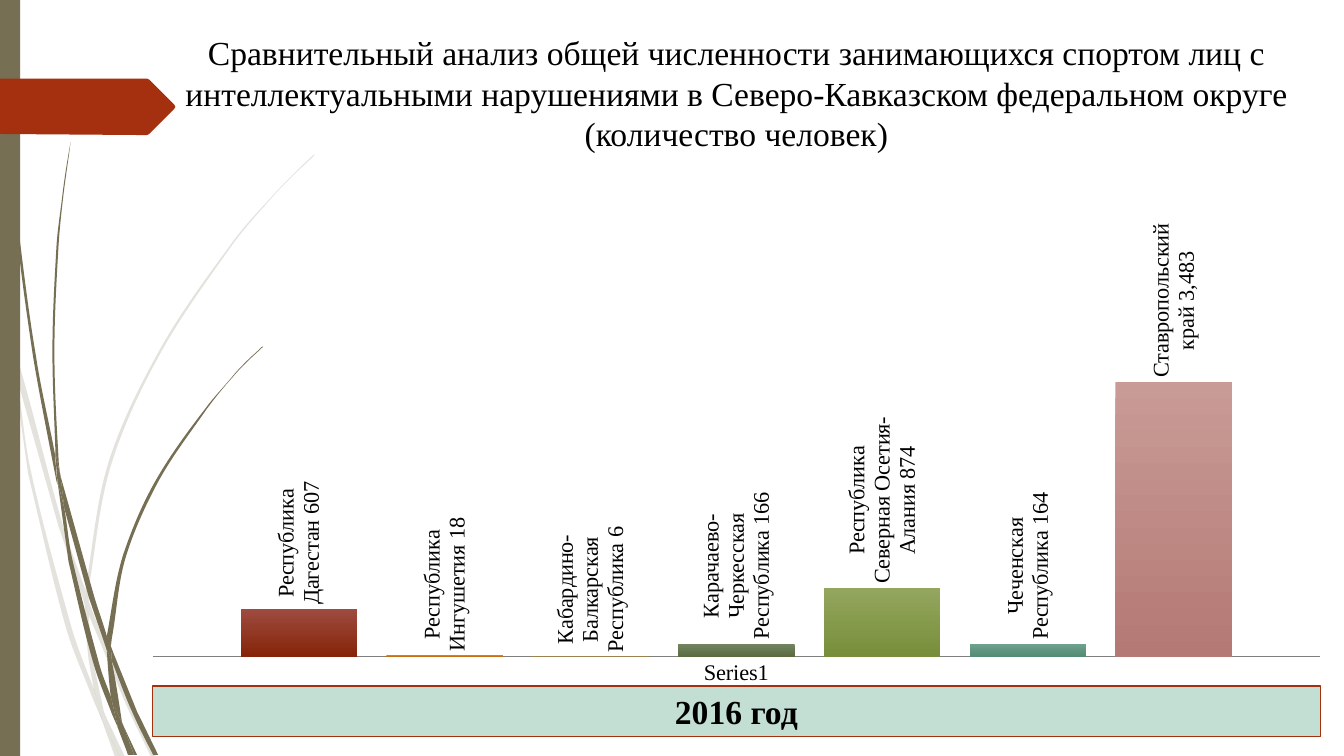
import math

import pptx
import pptx.chart.data
import pptx.dml.color
import pptx.enum.chart
import pptx.enum.shapes
import pptx.enum.text
import pptx.oxml
import pptx.oxml.ns
import pptx.util

Pt = pptx.util.Pt
qn = pptx.oxml.ns.qn
FONT = "Times New Roman"
GRID = Pt(0.72)  # drawing unit of the outlines
COLORS = {
    "black": "000000",
    "olive": "766F54",
    "red": "A53010",
    "mint": "C3DED3",
    "axis": "808080",
}

# Region, people, top and bottom colour of the column
REGIONS = [
    ("Республика Дагестан", 607, "9E4B40", "852408"),
    ("Республика Ингушетия", 18, "DE7E18", "C06A10"),
    ("Кабардино-Балкарская Республика", 6, "9F8351", "8A7040"),
    ("Карачаево-Черкесская Республика", 166, "728462", "5A6B40"),
    ("Республика Северная Осетия-Алания", 874, "94A65E", "788E3A"),
    ("Чеченская Республика", 164, "6CA28E", "548B74"),
    ("Ставропольский край", 3483, "C99B96", "B47974"),
]

# Pieces of the grass blades: one edge down, the other edge back, in grid units
PALE_GRASS = [
    ([(11, 350), (9, 322), (0, 282)], [(0, 299), (10, 344)]),
    ([(58, 522), (84, 599)], [(85, 586), (62, 520), (14, 345), (17, 376)]),
    ([(92, 607), (88, 596)], [(88, 610), (123, 694), (150, 751)], [(155, 751), (127, 692)]),
    ([(119, 751), (124, 751)], [(105, 711)]),
    ([(93, 683), (70, 619), (31, 469), (17, 376), (11, 350)],
     [(28, 470), (65, 621), (92, 693), (101, 714), (99, 707)]),
    ([(84, 599), (87, 646), (93, 683), (96, 692), (105, 711)],
     [(103, 706), (91, 646), (88, 610), (88, 608)]),
    ([(88, 584), (110, 462), (160, 349), (229, 245), (268, 198), (290, 175), (312, 154)],
     [(312, 153), (289, 175), (268, 197), (228, 244), (158, 348), (107, 461),
      (85, 584), (85, 586), (88, 596)]),
    ([(101, 714), (114, 751)], [(119, 751)]),
    ([(88, 608), (88, 610), (88, 596)], [(85, 586), (84, 599)]),
    ([(96, 692), (93, 683)], [(99, 707), (101, 714), (119, 751)], [(105, 711)]),
]
DARK_GRASS = [
    ([(7, 110), (17, 233), (33, 355), (56, 477), (57, 481)],
     [(55, 457), (55, 453), (36, 355), (19, 232), (8, 109), (5, 48), (4, 0)],
     [(3, 0), (4, 48)]),
    ([(88, 592), (106, 645)], [(106, 633), (106, 631), (93, 590), (60, 472)], [(64, 505)]),
    ([(113, 649), (110, 641)], [(111, 656), (132, 708), (152, 749)], [(157, 749), (136, 706)]),
    ([(110, 691), (98, 657), (72, 556), (64, 505), (57, 477)],
     [(68, 557), (93, 659), (111, 708), (117, 722)], [(116, 717)]),
    ([(60, 472), (58, 453), (54, 349), (58, 245), (63, 193), (70, 141)],
     [(70, 141), (62, 193), (56, 245), (52, 349), (55, 449)]),
    ([(133, 749), (136, 749)], [(122, 719)]),
    ([(57, 477), (64, 505)], [(60, 472), (55, 449)], [(55, 453)]),
    ([(111, 633), (125, 552), (158, 476), (205, 406), (231, 374), (245, 359), (261, 344)],
     [(260, 344), (245, 358), (231, 373), (204, 405), (156, 474), (122, 551),
      (106, 631)], [(110, 641)]),
    ([(117, 722), (127, 749)], [(131, 749)]),
    ([(106, 645), (110, 691), (116, 706), (122, 719)], [(121, 716), (111, 656), (109, 651)]),
    ([(106, 645), (109, 651), (111, 656)], [(110, 641), (106, 631), (106, 633)]),
    ([(116, 706), (110, 691)], [(116, 717), (117, 722), (130, 749)], [(133, 749), (122, 719)]),
]
ARROW = [[point] for point in (
    (173, 108), (148, 133), (146, 134), (136, 134), (0, 133), (0, 78), (136, 78),
    (146, 78), (148, 79), (173, 104), (174, 106))]


def rgb(value):
    return pptx.dml.color.RGBColor.from_string(value)


def paint(shape, color, alpha=None):
    shape.shadow.inherit = False
    shape.fill.solid()
    shape.fill.fore_color.rgb = rgb(COLORS[color])
    shape.line.fill.background()
    if alpha is not None:
        tint = shape.fill._xPr.find(".//" + qn("a:srgbClr"))
        tint.append(pptx.oxml.parse_xml(
            f'<a:alpha {pptx.oxml.ns.nsdecls("a")} val="{alpha * 1000}"/>'))


def handle(point, before, after, reach):
    """Control point that leaves point along the direction from before to after."""
    span = math.dist(before, after) or 1
    return tuple(p + (b - a) / span * reach for p, a, b in zip(point, before, after))


def curve_edges(shape, edges):
    """Turn the straight segments inside each edge into Bezier curves."""
    nodes = list(shape._element.iter(qn("a:moveTo"), qn("a:lnTo")))
    for edge in edges:
        group, nodes = nodes[:len(edge)], nodes[len(edge):]
        spots = [(int(node[0].get("x")), int(node[0].get("y"))) for node in group]
        padded = [spots[0]] + spots + [spots[-1]]
        for node, before, start, end, after in zip(
                group[1:], padded, padded[1:], padded[2:], padded[3:]):
            reach = math.dist(start, end) / 3
            controls = (handle(start, before, end, reach), handle(end, after, start, reach), end)
            points = "".join(f'<a:pt x="{round(x)}" y="{round(y)}"/>' for x, y in controls)
            node.getparent().replace(node, pptx.oxml.parse_xml(
                f'<a:cubicBezTo {pptx.oxml.ns.nsdecls("a")}>{points}</a:cubicBezTo>'))


def add_outline(page, left, top, edges, color, alpha=None):
    points = [point for edge in edges for point in edge]
    builder = page.shapes.build_freeform(*points[0], scale=GRID)
    builder.add_line_segments(points[1:], close=True)
    shape = builder.convert_to_shape(left, top)
    curve_edges(shape, edges)
    paint(shape, color, alpha)


def add_decoration(page, left, top, width, height):
    """Grass blades, side band and arrow along the left edge."""
    for grass, alpha in ((PALE_GRASS, 20), (DARK_GRASS, None)):
        for edges in grass:
            add_outline(page, left, top, edges, "olive", alpha)
    band = page.shapes.add_shape(
        pptx.enum.shapes.MSO_SHAPE.RECTANGLE, left, top, width, height)
    paint(band, "olive")
    add_outline(page, left, top, ARROW, "red")


def write(frame, text, bold=False):
    frame.word_wrap = True
    frame.text = text
    para = frame.paragraphs[0]
    para.alignment = pptx.enum.text.PP_ALIGN.CENTER
    font = para.runs[0].font
    font.name, font.size, font.bold = FONT, Pt(24), bold
    font.color.rgb = rgb(COLORS["black"])


def add_title(page, left, top, width, height):
    box = page.shapes.add_textbox(left, top, width, height)
    write(box.text_frame,
          "Сравнительный анализ общей численности занимающихся спортом лиц с "
          "интеллектуальными нарушениями в Северо-Кавказском федеральном округе "
          "(количество человек)")


def set_font(font):
    font.name, font.size = FONT, Pt(16)
    font.color.rgb = rgb(COLORS["black"])


def label_series(series):
    """Upright label with name and value above the column."""
    labels = series.data_labels
    labels.show_value = labels.show_series_name = True
    labels.number_format, labels.number_format_is_linked = "#,##0", False
    labels.position = pptx.enum.chart.XL_LABEL_POSITION.OUTSIDE_END
    set_font(labels.font)
    body = labels._element.find(".//" + qn("a:bodyPr"))
    for name, value in (("rot", "-5400000"), ("vert", "horz"), ("wrap", "square")):
        body.set(name, value)
    labels._element.find(qn("c:showBubbleSize")).addnext(pptx.oxml.parse_xml(
        f'<c:separator {pptx.oxml.ns.nsdecls("c")}> </c:separator>'))


def set_plot_area(chart, x, y, w, h):
    area = chart._chartSpace.chart.plotArea
    for old in area.findall(qn("c:layout")):
        area.remove(old)
    parts = [("layoutTarget", "inner"), ("xMode", "edge"), ("yMode", "edge"),
             ("x", x), ("y", y), ("w", w), ("h", h)]
    inner = "".join(f'<c:{name} val="{value}"/>' for name, value in parts)
    area.insert(0, pptx.oxml.parse_xml(
        f'<c:layout {pptx.oxml.ns.nsdecls("c")}>'
        f'<c:manualLayout>{inner}</c:manualLayout></c:layout>'))


def add_region_chart(page, left, top, width, height):
    data = pptx.chart.data.CategoryChartData(number_format="#,##0")
    data.categories = ["Series1"]
    for name, people, _, _ in REGIONS:
        data.add_series(name, [people])
    chart = page.shapes.add_chart(
        pptx.enum.chart.XL_CHART_TYPE.COLUMN_CLUSTERED, left, top, width, height, data).chart
    chart.has_legend = chart.has_title = False
    set_font(chart.font)
    plot = chart.plots[0]
    plot.gap_width, plot.overlap, plot.vary_by_categories = 150, -25, False
    for series, (_, _, upper, lower) in zip(plot.series, REGIONS):
        fill = series.format.fill
        fill.gradient()
        fill.gradient_angle = 270
        for stop, color in zip(fill.gradient_stops, (upper, lower)):
            stop.color.rgb = rgb(color)
        label_series(series)
    scale = chart.value_axis
    scale.minimum_scale, scale.maximum_scale = 0, 4000
    scale.has_major_gridlines = scale.visible = False
    axis = chart.category_axis
    axis.major_tick_mark = pptx.enum.chart.XL_TICK_MARK.NONE
    axis.format.line.color.rgb = rgb(COLORS["axis"])
    axis.format.line.width = Pt(0.75)
    set_plot_area(chart, 0, 0.34, 1, 0.61)


def add_year_bar(page, left, top, width, height):
    bar = page.shapes.add_shape(
        pptx.enum.shapes.MSO_SHAPE.RECTANGLE, left, top, width, height)
    paint(bar, "mint")
    bar.line.color.rgb = rgb(COLORS["red"])
    bar.line.width = Pt(0.75)
    write(bar.text_frame, "2016 год", bold=True)


def main():
    deck = pptx.Presentation()
    deck.slide_width, deck.slide_height = Pt(960), Pt(540)
    page = deck.slides.add_slide(deck.slide_layouts[6])
    add_decoration(page, 0, 0, Pt(14.4), Pt(540))
    add_title(page, Pt(105), Pt(19.5), Pt(842), Pt(94.5))
    add_region_chart(page, Pt(109), Pt(118), Pt(834), Pt(372))
    add_year_bar(page, Pt(109), Pt(490), Pt(834), Pt(36.3))
    deck.save("out.pptx")


if __name__ == "__main__":
    main()
